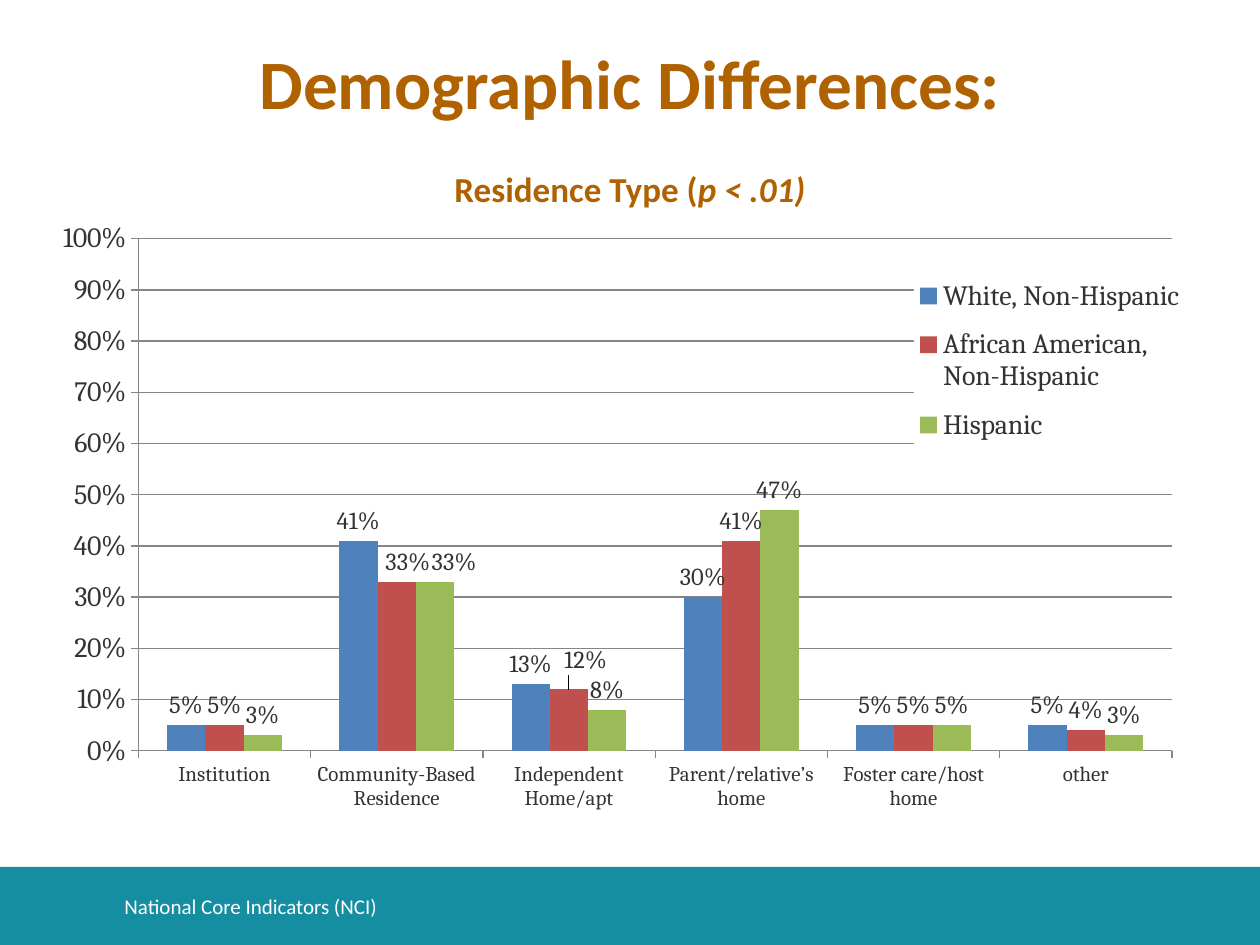
from lxml import etree
from pptx import Presentation
from pptx import util as u
from pptx.chart.data import CategoryChartData
from pptx.dml.color import RGBColor
from pptx.enum import chart as c, shapes, text
from pptx.oxml.ns import qn

BROWN = "B06100"
WHITE = "FFFFFF"
TEAL = "168EA2"
DARK = "333333"
GRID = "868686"
CATEGORIES = ["Institution", "Community-Based Residence", "Independent Home/apt",
              "Parent/relative’s home", "Foster care/host home", "other"]
SERIES = [
    ("White, Non-Hispanic", "4F81BD", [0.05, 0.41, 0.13, 0.3, 0.05, 0.05], {}),
    ("African American, Non-Hispanic", "C0504D", [0.05, 0.33, 0.12, 0.41, 0.05, 0.04],
     {1: (0.01, 0), 2: (0.015, -0.015)}),
    ("Hispanic", "9BBB59", [0.03, 0.33, 0.08, 0.47, 0.05, 0.03], {1: (0.017, 0)}),
]


def color(value):
    return RGBColor.from_string(value)


def set_font(font, name, size, value, bold=None):
    font.name = name
    font.size = u.Pt(size)
    font.color.rgb = color(value)
    font.bold = bold


def set_fill(fill, value):
    fill.solid()
    fill.fore_color.rgb = color(value)


def add_bar(slide, left, top, width, height, value):
    shape = slide.shapes.add_shape(shapes.MSO_SHAPE.RECTANGLE, u.Pt(left), u.Pt(top),
                                   u.Pt(width), u.Pt(height))
    shape.shadow.inherit = False
    set_fill(shape.fill, value)
    shape.line.fill.background()


def add_text(slide, box, runs, size, value, bold=False,
             align=text.PP_ALIGN.CENTER, spacing=None):
    shape = slide.shapes.add_textbox(*[u.Pt(length) for length in box])
    frame = shape.text_frame
    frame.word_wrap = True
    frame.vertical_anchor = text.MSO_ANCHOR.MIDDLE
    paragraph = frame.paragraphs[0]
    paragraph.alignment = align
    paragraph.line_spacing = spacing
    for words, italic in runs:
        run = paragraph.add_run()
        run.text = words
        set_font(run.font, "Calibri", size, value, bold)
        run.font.italic = italic


def make_layout(**values):
    layout = etree.Element(qn("c:layout"))
    manual = etree.SubElement(layout, qn("c:manualLayout"))
    for tag, value in values.items():
        etree.SubElement(manual, qn("c:" + tag)).set("val", str(value))
    return layout


def place(parent, index, **values):
    for old in parent.findall(qn("c:layout")):
        parent.remove(old)
    parent.insert(index, make_layout(**values))


def format_axis(axis, size):
    set_font(axis.tick_labels.font, "Cambria", size, DARK)
    axis.major_tick_mark = c.XL_TICK_MARK.OUTSIDE
    axis.minor_tick_mark = c.XL_TICK_MARK.NONE
    axis.format.line.color.rgb = color(GRID)
    axis.format.line.width = u.Pt(0.75)


def format_series(series, value, offsets):
    set_fill(series.format.fill, value)
    series.invert_if_negative = False
    labels = series.data_labels
    labels.show_value = True
    labels.number_format = "0%"
    labels.number_format_is_linked = False
    labels.position = c.XL_LABEL_POSITION.OUTSIDE_END
    set_font(labels.font, "Cambria", 14, DARK)
    for index, (x, y) in offsets.items():
        label = series.points[index].data_label
        set_font(label.font, "Cambria", 14, DARK)
        label.position = c.XL_LABEL_POSITION.OUTSIDE_END
        item = label.font._element.getparent()
        while item.tag != qn("c:dLbl"):
            item = item.getparent()
        place(item, 1, x=x, y=y)


def format_legend(chart):
    chart.has_legend = True
    legend = chart.legend
    legend.position = c.XL_LEGEND_POSITION.RIGHT
    legend.include_in_layout = False
    set_font(legend.font, "Cambria", 16, DARK)
    element = legend._element
    place(element, 1, xMode="edge", yMode="edge", x=0.75, y=0.07, w=0.24, h=0.32)
    properties = etree.Element(qn("c:spPr"))
    fill = etree.SubElement(properties, qn("a:solidFill"))
    etree.SubElement(fill, qn("a:srgbClr")).set("val", WHITE)
    element.find(qn("c:txPr")).addprevious(properties)


def add_residence_chart(slide, box):
    data = CategoryChartData(number_format="0%")
    data.categories = CATEGORIES
    for name, _, values, _ in SERIES:
        data.add_series(name, values)
    chart = slide.shapes.add_chart(c.XL_CHART_TYPE.COLUMN_CLUSTERED,
                                   *[u.Pt(length) for length in box], data).chart
    chart.has_title = False
    set_font(chart.font, "Cambria", 10, DARK)
    plot = chart.plots[0]
    plot.vary_by_categories = False
    plot.gap_width = 150
    plot.overlap = 0
    format_axis(chart.category_axis, 12)
    axis = chart.value_axis
    format_axis(axis, 16)
    axis.minimum_scale, axis.maximum_scale, axis.major_unit = 0, 1, 0.1
    axis.tick_labels.number_format = "0%"
    axis.tick_labels.number_format_is_linked = False
    axis.major_gridlines.format.line.color.rgb = color(GRID)
    axis.major_gridlines.format.line.width = u.Pt(0.75)
    for series, (_, value, _, offsets) in zip(plot.series, SERIES):
        format_series(series, value, offsets)
    format_legend(chart)
    place(chart._chartSpace.chart.plotArea, 0, layoutTarget="inner", xMode="edge",
          yMode="edge", x=0.065, y=0.03, w=0.913, h=0.841)


def main():
    presentation = Presentation()
    presentation.slide_width, presentation.slide_height = u.Pt(720), u.Pt(540)
    slide = presentation.slides.add_slide(presentation.slide_layouts[6])
    add_bar(slide, 0, 495.4, 720, 44.6, TEAL)
    add_text(slide, (36, 90, 648, 36), [("Residence Type (", None), ("p < .01)", True)],
             20, BROWN, bold=True)
    add_text(slide, (64, 503.5, 533, 29), [("National Core Indicators (NCI)", None)],
             12, WHITE, align=text.PP_ALIGN.LEFT)
    add_text(slide, (36, 24.5, 648, 51), [("Demographic Differences:", None)],
             39.6, BROWN, bold=True, spacing=0.9)
    add_residence_chart(slide, (36, 126, 648, 348))
    presentation.save("out.pptx")


if __name__ == "__main__":
    main()
